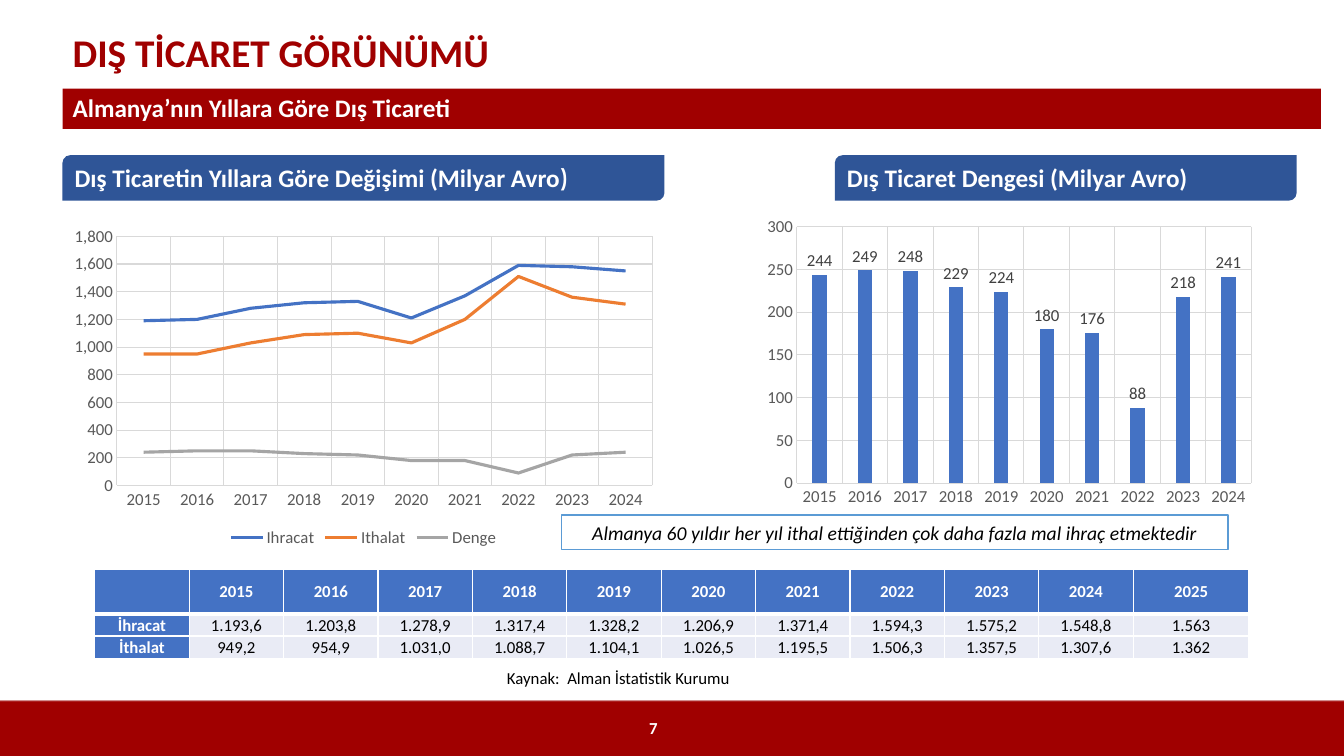
from dataclasses import dataclass
from typing import Any, Optional

import pptx
import pptx.chart.data
import pptx.dml.color
import pptx.enum.chart
import pptx.enum.shapes
import pptx.enum.text
import pptx.oxml
import pptx.oxml.ns
import pptx.util

RGBColor = pptx.dml.color.RGBColor
SHAPE = pptx.enum.shapes.MSO_SHAPE
ALIGN = pptx.enum.text.PP_ALIGN
CHART = pptx.enum.chart.XL_CHART_TYPE

RED = RGBColor(0xA0, 0x00, 0x00)
PALE = RGBColor(0xF6, 0xF8, 0xFC)
WHITE = RGBColor(0xFF, 0xFF, 0xFF)
BLACK = RGBColor(0x00, 0x00, 0x00)
NAVY = RGBColor(0x2F, 0x55, 0x97)
BLUE = RGBColor(0x44, 0x72, 0xC4)
SKY = RGBColor(0x5B, 0x9B, 0xD5)
ORANGE = RGBColor(0xED, 0x7D, 0x31)
GRAY = RGBColor(0xA5, 0xA5, 0xA5)
GRID = RGBColor(0xD9, 0xD9, 0xD9)
AXIS_TEXT = RGBColor(0x59, 0x59, 0x59)
LABEL_TEXT = RGBColor(0x40, 0x40, 0x40)
ROW_FILL = RGBColor(0xE9, 0xEB, 0xF5)

SCALE = 9144
YEARS = [str(year) for year in range(2015, 2026)]
TABLE_ROWS = [
    ["", *YEARS],
    ["İhracat", "1.193,6", "1.203,8", "1.278,9", "1.317,4", "1.328,2", "1.206,9",
     "1.371,4", "1.594,3", "1.575,2", "1.548,8", "1.563"],
    ["İthalat", "949,2", "954,9", "1.031,0", "1.088,7", "1.104,1", "1.026,5",
     "1.195,5", "1.506,3", "1.357,5", "1.307,6", "1.362"],
]


@dataclass(frozen=True)
class Box:
    left: int
    top: int
    width: int
    height: int

    def emu(self) -> list[int]:
        return [px(length) for length in (self.left, self.top, self.width, self.height)]


@dataclass(frozen=True)
class TextStyle:
    size: int
    color: RGBColor
    bold: bool = False
    italic: bool = False
    align: Any = ALIGN.LEFT


@dataclass(frozen=True)
class Panel:
    box: Box
    shape_type: Any
    fill: RGBColor
    style: TextStyle
    runs: tuple[tuple[str, str], ...] = ()
    line: Optional[RGBColor] = None


@dataclass(frozen=True)
class Series:
    name: str
    values: list[int]
    color: RGBColor


@dataclass(frozen=True)
class ChartSpec:
    box: Box
    chart_type: Any
    maximum: int
    step: int
    series: list[Series]


HEADING = TextStyle(18, WHITE, bold=True)
CENTERED = TextStyle(12, WHITE, bold=True, align=ALIGN.CENTER)
VALUE = TextStyle(12, BLACK, align=ALIGN.CENTER)

PANELS = [
    Panel(Box(62, 154, 597, 45), SHAPE.ROUND_2_DIAG_RECTANGLE, NAVY, HEADING,
          (("Dış Ticaretin Yıllara Göre Değişimi (Milyar Avro", "Calibri"), (")", "Cabin"))),
    Panel(Box(828, 154, 458, 45), SHAPE.ROUND_2_DIAG_RECTANGLE, NAVY, HEADING,
          (("Dış Ticaret Dengesi (Milyar Avro)", "Calibri"),)),
    Panel(Box(557, 511, 661, 34), SHAPE.RECTANGLE, WHITE,
          TextStyle(14, BLACK, italic=True, align=ALIGN.CENTER),
          (("Almanya 60 yıldır her yıl ithal ettiğinden çok daha fazla mal ihraç etmektedir",
            "Calibri"),), SKY),
]
CHARTS = [
    ChartSpec(Box(62, 218, 597, 329), CHART.LINE, 1800, 200, [
        Series("Ihracat", [1190, 1200, 1280, 1320, 1330, 1210, 1370, 1590, 1580, 1550], BLUE),
        Series("Ithalat", [950, 950, 1030, 1090, 1100, 1030, 1200, 1510, 1360, 1310], ORANGE),
        Series("Denge", [240, 250, 250, 230, 220, 180, 180, 90, 220, 240], GRAY),
    ]),
    ChartSpec(Box(751, 209, 500, 300), CHART.COLUMN_CLUSTERED, 300, 50, [
        Series("Denge", [244, 249, 248, 229, 224, 180, 176, 88, 218, 241], BLUE),
    ]),
]


def px(length: int) -> int:
    return length * SCALE


def apply_format(target: Any, values: dict[str, Any]) -> None:
    for name, value in values.items():
        setattr(target, name, value)


def format_font(font: Any, style: TextStyle, name: str = "Calibri") -> None:
    apply_format(font, {"size": pptx.util.Pt(style.size), "name": name,
                        "bold": style.bold, "italic": style.italic})
    font.color.rgb = style.color


def write_runs(frame: Any, runs: tuple[tuple[str, str], ...], style: TextStyle) -> None:
    paragraph = frame.paragraphs[0]
    apply_format(paragraph, {"alignment": style.align, "space_before": pptx.util.Pt(0)})
    for text, font_name in runs:
        run = paragraph.add_run()
        run.text = text
        format_font(run.font, style, font_name)


def fill_placeholder(shape: Any, box: Box, text: str, style: TextStyle) -> None:
    apply_format(shape, dict(zip(("left", "top", "width", "height"), box.emu())))
    apply_format(shape.text_frame, {"word_wrap": True,
                                    "auto_size": pptx.enum.text.MSO_AUTO_SIZE.NONE,
                                    "vertical_anchor": pptx.enum.text.MSO_ANCHOR.MIDDLE})
    write_runs(shape.text_frame, ((text, "Calibri"),), style)


def draw_panel(slide: Any, panel: Panel) -> Any:
    shape = slide.shapes.add_shape(panel.shape_type, *panel.box.emu())
    shape.shadow.inherit = False
    shape.fill.solid()
    shape.fill.fore_color.rgb = panel.fill
    if panel.line is None:
        shape.line.fill.background()
    else:
        shape.line.color.rgb = panel.line
        shape.line.width = pptx.util.Pt(1)
    write_runs(shape.text_frame, panel.runs, panel.style)
    return shape


def draw_text(slide: Any, box: Box, text: str, style: TextStyle, wrap: bool) -> None:
    frame = slide.shapes.add_textbox(*box.emu()).text_frame
    apply_format(frame, {"word_wrap": wrap,
                         "vertical_anchor": pptx.enum.text.MSO_ANCHOR.MIDDLE})
    write_runs(frame, ((text, "Calibri"),), style)


def draw_borders(cell: Any, bottom_points: int) -> None:
    properties = cell._tc.get_or_add_tcPr()
    for index, side in enumerate(("lnL", "lnR", "lnT", "lnB")):
        width = pptx.util.Pt(bottom_points if side == "lnB" else 1)
        properties.insert(index, pptx.oxml.parse_xml(
            f'<a:{side} {pptx.oxml.ns.nsdecls("a")} w="{width}"><a:solidFill>'
            f'<a:srgbClr val="{WHITE}"/></a:solidFill></a:{side}>'))


def draw_table(slide: Any, box: Box, row_heights: list[int], last_width: int) -> None:
    columns = len(TABLE_ROWS[0])
    table = slide.shapes.add_table(len(TABLE_ROWS), columns, *box.emu()).table
    for index, column in enumerate(table.columns):
        last = index == columns - 1
        column.width = px(last_width) if last else px(box.width - last_width) // (columns - 1)
    for row_index, texts in enumerate(TABLE_ROWS):
        table.rows[row_index].height = px(row_heights[row_index])
        for column_index, text in enumerate(texts):
            cell = table.cell(row_index, column_index)
            header = row_index == 0 or column_index == 0
            apply_format(cell, {"margin_left": px(1), "margin_right": px(1),
                                "margin_top": px(1), "margin_bottom": 0,
                                "vertical_anchor": pptx.enum.text.MSO_ANCHOR.MIDDLE})
            cell.fill.solid()
            cell.fill.fore_color.rgb = BLUE if header else ROW_FILL
            draw_borders(cell, 3 if row_index == 0 else 1)
            if text:
                write_runs(cell.text_frame, ((text, "Calibri"),), CENTERED if header else VALUE)


def format_line(line: Any, color: RGBColor, points: float) -> None:
    line.color.rgb = color
    line.width = pptx.util.Pt(points)


def draw_chart(slide: Any, spec: ChartSpec) -> None:
    data = pptx.chart.data.CategoryChartData(number_format="#,##0")
    data.categories = YEARS[:10]
    for series in spec.series:
        data.add_series(series.name, series.values)
    chart = slide.shapes.add_chart(spec.chart_type, *spec.box.emu(), data).chart
    is_line = spec.chart_type == CHART.LINE
    apply_format(chart, {"has_title": False, "has_legend": is_line})
    format_font(chart.font, TextStyle(10, BLACK))
    for axis in (chart.category_axis, chart.value_axis):
        apply_format(axis, {"has_major_gridlines": True,
                            "major_tick_mark": pptx.enum.chart.XL_TICK_MARK.NONE})
        format_font(axis.tick_labels.font, TextStyle(12, AXIS_TEXT))
        format_line(axis.major_gridlines.format.line, GRID, 0.75)
    format_line(chart.category_axis.format.line, GRID, 0.75)
    chart.value_axis.format.line.fill.background()
    apply_format(chart.value_axis, {"minimum_scale": 0, "maximum_scale": spec.maximum,
                                    "major_unit": spec.step})
    apply_format(chart.value_axis.tick_labels, {"number_format": "#,##0",
                                                "number_format_is_linked": False})
    plot = chart.plots[0]
    plot.vary_by_categories = False
    for drawn, series in zip(plot.series, spec.series):
        if is_line:
            drawn.smooth = False
            format_line(drawn.format.line, series.color, 2.25)
        else:
            drawn.format.fill.solid()
            drawn.format.fill.fore_color.rgb = series.color
    if is_line:
        apply_format(chart.legend, {"position": pptx.enum.chart.XL_LEGEND_POSITION.BOTTOM,
                                    "include_in_layout": False})
        format_font(chart.legend.font, TextStyle(12, AXIS_TEXT))
    else:
        apply_format(plot, {"gap_width": 219, "overlap": -27, "has_data_labels": True})
        apply_format(plot.data_labels, {
            "show_value": True, "number_format": "#,##0", "number_format_is_linked": False,
            "position": pptx.enum.chart.XL_LABEL_POSITION.OUTSIDE_END})
        format_font(plot.data_labels.font, TextStyle(12, LABEL_TEXT))


def main() -> None:
    presentation = pptx.Presentation()
    apply_format(presentation, {"slide_width": px(1333), "slide_height": px(750)})
    slide = presentation.slides.add_slide(presentation.slide_layouts[2])
    title, subtitle = slide.placeholders
    footer = draw_panel(slide, Panel(Box(0, 694, 1333, 56), SHAPE.RECTANGLE, RED, CENTERED))
    footer.fill.gradient()
    footer.fill.gradient_angle = 270
    for stop, position, color in zip(footer.fill.gradient_stops, (0, 0.04), (PALE, RED)):
        stop.position = position
        stop.color.rgb = color
    band = draw_panel(slide, Panel(Box(62, 88, 1248, 40), SHAPE.RECTANGLE, RED, HEADING))
    title.element.addprevious(footer.element)
    title.element.addprevious(band.element)
    fill_placeholder(title, Box(62, 28, 1248, 47), "DIŞ TİCARET GÖRÜNÜMÜ",
                     TextStyle(28, RED, bold=True))
    fill_placeholder(subtitle, Box(62, 86, 1248, 41),
                     "Almanya’nın Yıllara Göre Dış Ticareti", HEADING)
    draw_text(slide, Box(596, 694, 104, 56), "7", CENTERED, True)
    for spec in CHARTS:
        draw_chart(slide, spec)
    for panel in PANELS:
        draw_panel(slide, panel)
    draw_table(slide, Box(94, 565, 1145, 88), [44, 22, 22], 115)
    draw_text(slide, Box(493, 657, 248, 30), "Kaynak:  Alman İstatistik Kurumu",
              TextStyle(12, BLACK), False)
    presentation.save("out.pptx")


if __name__ == "__main__":
    main()
